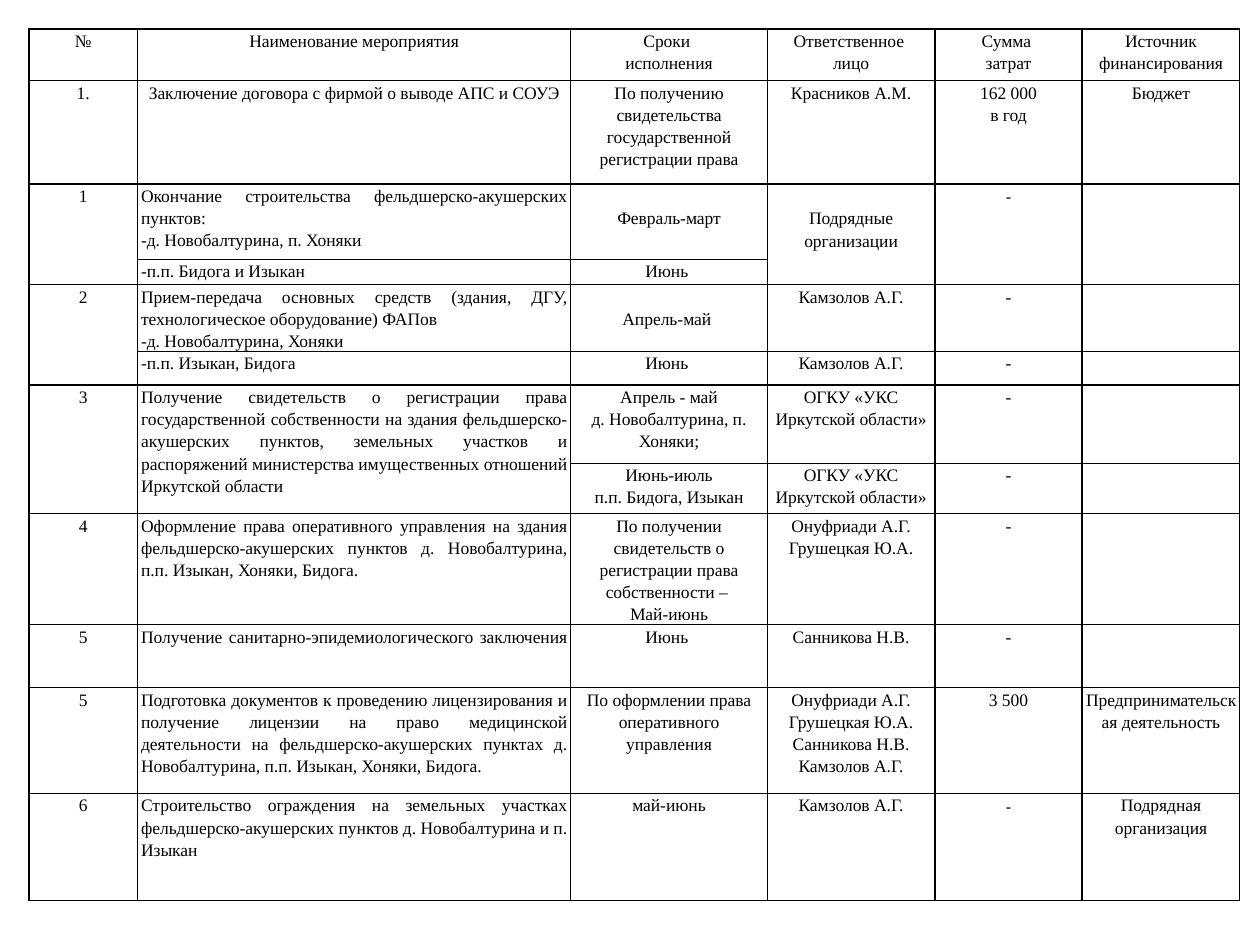
from lxml.etree import SubElement as Sub
from pptx import Presentation
from pptx.dml.color import RGBColor as Rgb
from pptx.enum.text import PP_ALIGN as Align
from pptx.oxml.ns import qn
from pptx.util import Inches, Pt

INK = {"text": "000000", "line": "000000"}
FONT, DASH, SIZE = "Times New Roman", "Calibri", 10
LEFT, TOP, PAD, DROP = 0.23, 0.23, 0.03, 0.18
COLS = [0.86, 3.44, 1.56, 1.33, 1.17, 1.25]
HIGH = [0.41, 0.82, 0.6, 0.2, 0.52, 0.27, 0.62, 0.4, 0.82, 0.5, 0.84, 0.85]
UP = None
ROWS = [
    ["№", "Наименование мероприятия", "Сроки \nисполнения",
     "Ответственное \nлицо", "Сумма \nзатрат", "Источник финансирования"],
    ["1.", "Заключение договора с фирмой о выводе АПС и СОУЭ",
     "По получению свидетельства государственной регистрации права",
     "Красников А.М.", "162 000\nв год", "Бюджет"],
    ["1", "Окончание строительства фельдшерско-акушерских пунктов: \n"
     "-д. Новобалтурина, п. Хоняки ",
     "Февраль-март", "Подрядные\nорганизации", "-", ""],
    [UP, "-п.п. Бидога и Изыкан", "Июнь ", UP, UP, UP],
    ["2", "Прием-передача основных средств (здания, ДГУ, технологическое "
     "оборудование) ФАПов \n-д. Новобалтурина, Хоняки",
     "Апрель-май ", "Камзолов А.Г.", "-", ""],
    [UP, "-п.п. Изыкан, Бидога", "Июнь ", "Камзолов А.Г.", "-", ""],
    ["3", "Получение свидетельств о регистрации права государственной "
     "собственности на здания фельдшерско-акушерских пунктов, земельных "
     "участков и распоряжений министерства имущественных отношений "
     "Иркутской области",
     "Апрель - май\nд. Новобалтурина, п. Хоняки;",
     "ОГКУ «УКС Иркутской области»", "-", ""],
    [UP, UP, "Июнь-июль\nп.п. Бидога, Изыкан",
     "ОГКУ «УКС Иркутской области»", "-", ""],
    ["4", "Оформление права оперативного управления на здания "
     "фельдшерско-акушерских пунктов д. Новобалтурина, п.п. Изыкан, "
     "Хоняки, Бидога.",
     "По получении свидетельств о регистрации права собственности – \n"
     "Май-июнь", "Онуфриади А.Г.\nГрушецкая Ю.А.", "-", ""],
    ["5", "Получение санитарно-эпидемиологического заключения ",
     "Июнь ", "Санникова Н.В.", "-", ""],
    ["5", "Подготовка документов к проведению лицензирования и получение "
     "лицензии на право медицинской деятельности на фельдшерско-акушерских "
     "пунктах д. Новобалтурина, п.п. Изыкан, Хоняки, Бидога.",
     "По оформлении права оперативного управления",
     "Онуфриади А.Г.\nГрушецкая Ю.А.\nСанникова Н.В.\nКамзолов А.Г.",
     "3 500", "Предпринимательская деятельность"],
    ["6", "Строительство ограждения на земельных участках "
     "фельдшерско-акушерских пунктов д. Новобалтурина и п. Изыкан",
     "май-июнь", "Камзолов А.Г.", "-", "Подрядная организация"],
]
LOWER = {(2, 2), (2, 3), (4, 2)}
CALIBRI = {(2, 4), (11, 4)}


def frame(cell):
    props = cell._tc.get_or_add_tcPr()
    for side in ("lnL", "lnR", "lnT", "lnB"):
        line = Sub(props, qn("a:" + side), w=str(Pt(1)))
        fill = Sub(line, qn("a:solidFill"))
        Sub(fill, qn("a:srgbClr"), val=INK["line"])
    cell.fill.background()


def write(cell, text, align, font):
    body = cell.text_frame
    for i, part in enumerate(text.split("\n")):
        para = body.add_paragraph() if i else body.paragraphs[0]
        para.alignment = align
        para.line_spacing = 1.15
        if part:
            run = para.add_run()
            run.text = part
            run.font.size = Pt(SIZE)
            run.font.name = font
            run.font.color.rgb = Rgb.from_string(INK["text"])
        else:
            Sub(para._p, qn("a:endParaRPr"), sz=str(SIZE * 100))


def main():
    deck = Presentation()
    deck.slide_width, deck.slide_height = Inches(10), Inches(7.5)
    slide = deck.slides.add_slide(deck.slide_layouts[6])
    table = slide.shapes.add_table(
        len(ROWS), len(COLS), Inches(LEFT), Inches(TOP),
        Inches(sum(COLS)), Inches(sum(HIGH))).table
    table.first_row = table.horz_banding = False
    for col, wide in zip(table.columns, COLS):
        col.width = Inches(wide)
    for row, high in zip(table.rows, HIGH):
        row.height = Inches(high)

    for r, texts in enumerate(ROWS):
        for c, text in enumerate(texts):
            cell = table.cell(r, c)
            cell.margin_left = cell.margin_right = Inches(PAD)
            cell.margin_top = Inches(DROP if (r, c) in LOWER else 0)
            cell.margin_bottom = 0
            frame(cell)
            align = Align.JUSTIFY if c == 1 and r > 1 else Align.CENTER
            font = DASH if (r, c) in CALIBRI else FONT
            write(cell, text or "", align, font)
            if text is UP:
                table.cell(r - 1, c).merge(cell)

    deck.save("out.pptx")


if __name__ == "__main__":
    main()
